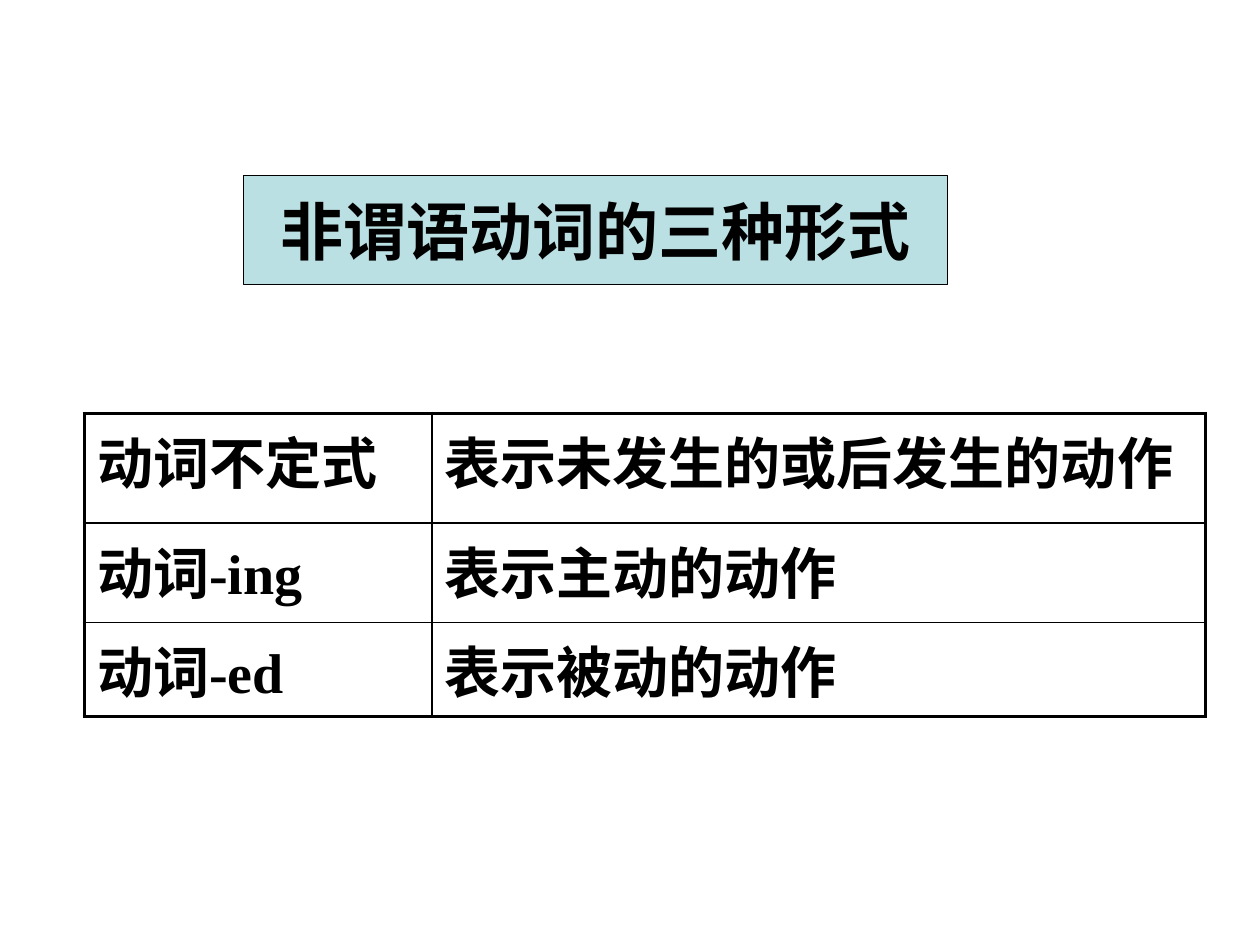
from dataclasses import dataclass

from lxml import etree
from pptx import Presentation
from pptx.dml.color import RGBColor
from pptx.enum.text import MSO_ANCHOR, MSO_AUTO_SIZE, PP_ALIGN
from pptx.oxml.ns import qn
from pptx.util import Inches, Pt

MIDDLE = MSO_ANCHOR.MIDDLE
FIXED = MSO_AUTO_SIZE.NONE
CENTER = PP_ALIGN.CENTER

BLACK = "000000"
AQUA = "BBE0E3"
THICK, THIN = 2.25, 1
WIDTHS = (2.76, 6.14)
HEIGHTS = (0.87, 0.79, 0.71)


@dataclass
class Form:
    name: str
    sense: str


FORMS = [
    Form("动词不定式", "表示未发生的或后发生的动作"),
    Form("动词-ing", "表示主动的动作"),
    Form("动词-ed", "表示被动的动作"),
]


def color(code: str) -> RGBColor:
    return RGBColor.from_string(code)


def style(para, size: float, font: str) -> None:
    for run in para.runs:
        run.font.size = Pt(size)
        run.font.name = font
        run.font.bold = True
        run.font.color.rgb = color(BLACK)


def add_edges(cell, edges: dict[str, float]) -> None:
    """Put the borders, keyed L, R, T, B in that order, ahead of the cell fill."""
    props = cell._tc.get_or_add_tcPr()
    for spot, (side, width) in enumerate(edges.items()):
        line = etree.Element(qn(f"a:ln{side}"), w=str(int(Pt(width))))
        fill = etree.SubElement(line, qn("a:solidFill"))
        etree.SubElement(fill, qn("a:srgbClr"), val=BLACK)
        props.insert(spot, line)


def draw_title(slide) -> None:
    title = slide.shapes.title
    title.left, title.top = Inches(1.93), Inches(1.39)
    title.width, title.height = Inches(5.59), Inches(0.87)
    title.fill.solid()
    title.fill.fore_color.rgb = color(AQUA)
    title.line.color.rgb = color(BLACK)
    title.line.width = Pt(0.75)
    frame = title.text_frame
    frame.text = "非谓语动词的三种形式"
    frame.word_wrap = False
    frame.auto_size = FIXED
    frame.vertical_anchor = MIDDLE
    para = frame.paragraphs[0]
    para.alignment = CENTER
    style(para, 36, "Arial")


def draw_table(slide, forms: list[Form]) -> None:
    rows, cols = len(forms), len(WIDTHS)
    table = slide.shapes.add_table(
        rows, cols, Inches(0.67), Inches(3.28),
        Inches(sum(WIDTHS)), Inches(sum(HEIGHTS)),
    ).table
    table.first_row = table.horz_banding = False
    for col, width in zip(table.columns, WIDTHS):
        col.width = Inches(width)
    for r, form in enumerate(forms):
        table.rows[r].height = Inches(HEIGHTS[r])
        for c, text in enumerate((form.name, form.sense)):
            cell = table.cell(r, c)
            cell.fill.background()
            cell.text_frame.text = text
            para = cell.text_frame.paragraphs[0]
            para.space_before = Pt(6.4)
            style(para, 32, "Times New Roman")
            add_edges(cell, {
                "L": THICK if c == 0 else THIN,
                "R": THICK if c == cols - 1 else THIN,
                "T": THICK if r == 0 else THIN,
                "B": THICK if r == rows - 1 else THIN,
            })


def main() -> None:
    deck = Presentation()
    deck.slide_width, deck.slide_height = Inches(10), Inches(7.5)
    slide = deck.slides.add_slide(deck.slide_layouts.get_by_name("Title Only"))
    draw_title(slide)
    draw_table(slide, FORMS)
    deck.save("out.pptx")


if __name__ == "__main__":
    main()
